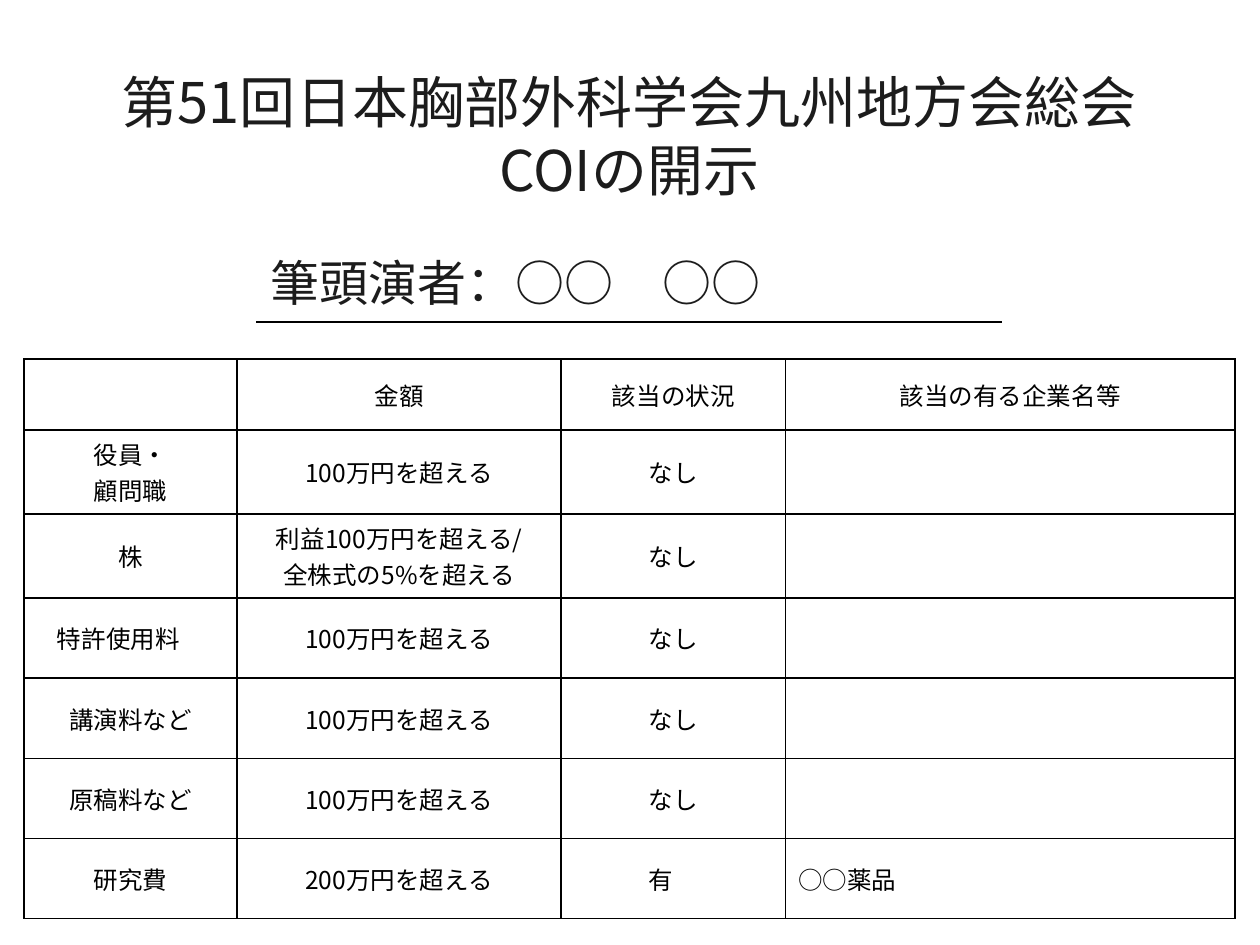
from dataclasses import dataclass

from lxml import etree
from pptx import Presentation
from pptx.dml.color import RGBColor
from pptx.enum import shapes, text
from pptx.oxml import ns
from pptx.util import Pt


@dataclass(frozen=True)
class Theme:
    font: str = "Noto Sans CJK JP"
    heading_color: str = "1C1C1C"
    table_color: str = "000000"
    rule_color: str = "000000"
    rule_width: float = 1
    title_size: float = 32
    title_leading: float = 38.9
    presenter_size: float = 28
    table_size: float = 14


class SlideBuilder:
    def __init__(self, slide, theme):
        self.slide = slide
        self.theme = theme

    def style_font(self, font, size, color):
        font.size = Pt(size)
        font.name = self.theme.font
        font.color.rgb = RGBColor.from_string(color)

    def style_run(self, run, size, color):
        self.style_font(run.font, size, color)
        east_asian = etree.Element(ns.qn("a:ea"), typeface=self.theme.font)
        run.font._element.find(ns.qn("a:latin")).addnext(east_asian)

    def add_text(self, box, content, size, align, leading=None):
        shape = self.slide.shapes.add_textbox(*map(Pt, box))
        frame = shape.text_frame
        frame.word_wrap = True
        frame.vertical_anchor = text.MSO_ANCHOR.MIDDLE
        frame.text = content
        for paragraph in frame.paragraphs:
            paragraph.alignment = align
            if leading:
                paragraph.line_spacing = Pt(leading)
            for run in paragraph.runs:
                self.style_run(run, size, self.theme.heading_color)

    def add_rule(self, left, right, y):
        line = self.slide.shapes.add_connector(
            shapes.MSO_CONNECTOR.STRAIGHT, Pt(left), Pt(y), Pt(right), Pt(y))
        line.line.color.rgb = RGBColor.from_string(self.theme.rule_color)
        line.line.width = Pt(self.theme.rule_width)
        etree.SubElement(line._element.spPr, ns.qn("a:effectLst"))

    def add_table(self, left, top, widths, heights, rows):
        frame = self.slide.shapes.add_table(
            len(heights), len(widths), Pt(left), Pt(top),
            Pt(sum(widths)), Pt(sum(heights)))
        table = frame.table
        table.first_row = table.horz_banding = False
        for column, width in zip(table.columns, widths):
            column.width = Pt(width)
        for row, height, contents in zip(table.rows, heights, rows):
            row.height = Pt(height)
            for index, (cell, content) in enumerate(zip(row.cells, contents)):
                is_company = index == len(widths) - 1 and contents is not rows[0]
                align = text.PP_ALIGN.LEFT if is_company else text.PP_ALIGN.CENTER
                self.fill_cell(cell, content, align)

    def fill_cell(self, cell, content, align):
        theme = self.theme
        cell.vertical_anchor = text.MSO_ANCHOR.MIDDLE
        cell.text_frame.text = content
        paragraph = cell.text_frame.paragraphs[0]
        paragraph.alignment = align
        self.style_font(paragraph.font, theme.table_size, theme.table_color)
        for run in paragraph.runs:
            self.style_run(run, theme.table_size, theme.table_color)
        self.add_borders(cell)
        cell.fill.background()

    def add_borders(self, cell):
        properties = cell._tc.get_or_add_tcPr()
        for side in ("lnL", "lnR", "lnT", "lnB"):
            border = etree.SubElement(
                properties, ns.qn(f"a:{side}"), w=str(Pt(self.theme.rule_width)))
            fill = etree.SubElement(border, ns.qn("a:solidFill"))
            etree.SubElement(fill, ns.qn("a:srgbClr"), val=self.theme.rule_color)


# A vertical tab is a line break within a paragraph.
DISCLOSURES = [
    ("", "金額", "該当の状況", "該当の有る企業名等"),
    ("役員・\v顧問職", "100万円を超える", "なし", ""),
    ("株", "利益100万円を超える/\v全株式の5%を超える", "なし", ""),
    ("特許使用料　", "100万円を超える", "なし", ""),
    ("講演料など", "100万円を超える", "なし", ""),
    ("原稿料など", "100万円を超える", "なし", ""),
    ("研究費", "200万円を超える", "有　", "○○薬品"),
]


def main():
    presentation = Presentation()
    presentation.slide_width, presentation.slide_height = Pt(720), Pt(540)
    slide = presentation.slides.add_slide(presentation.slide_layouts[6])
    theme = Theme()
    builder = SlideBuilder(slide, theme)

    builder.add_table(13.8, 205.2, [121.7, 185.2, 128.2, 256.9],
                      [40.5] + [45.8] * 6, DISCLOSURES)
    builder.add_text((147.6, 140.4, 427.7, 41), "筆頭演者：○○　○○",
                     theme.presenter_size, text.PP_ALIGN.LEFT)
    builder.add_rule(146.4, 572.4, 184.2)
    builder.add_text((35.3, 34.6, 648.7, 85),
                     "第51回日本胸部外科学会九州地方会総会\nCOIの開示",
                     theme.title_size, text.PP_ALIGN.CENTER, theme.title_leading)
    presentation.save("out.pptx")


if __name__ == "__main__":
    main()
